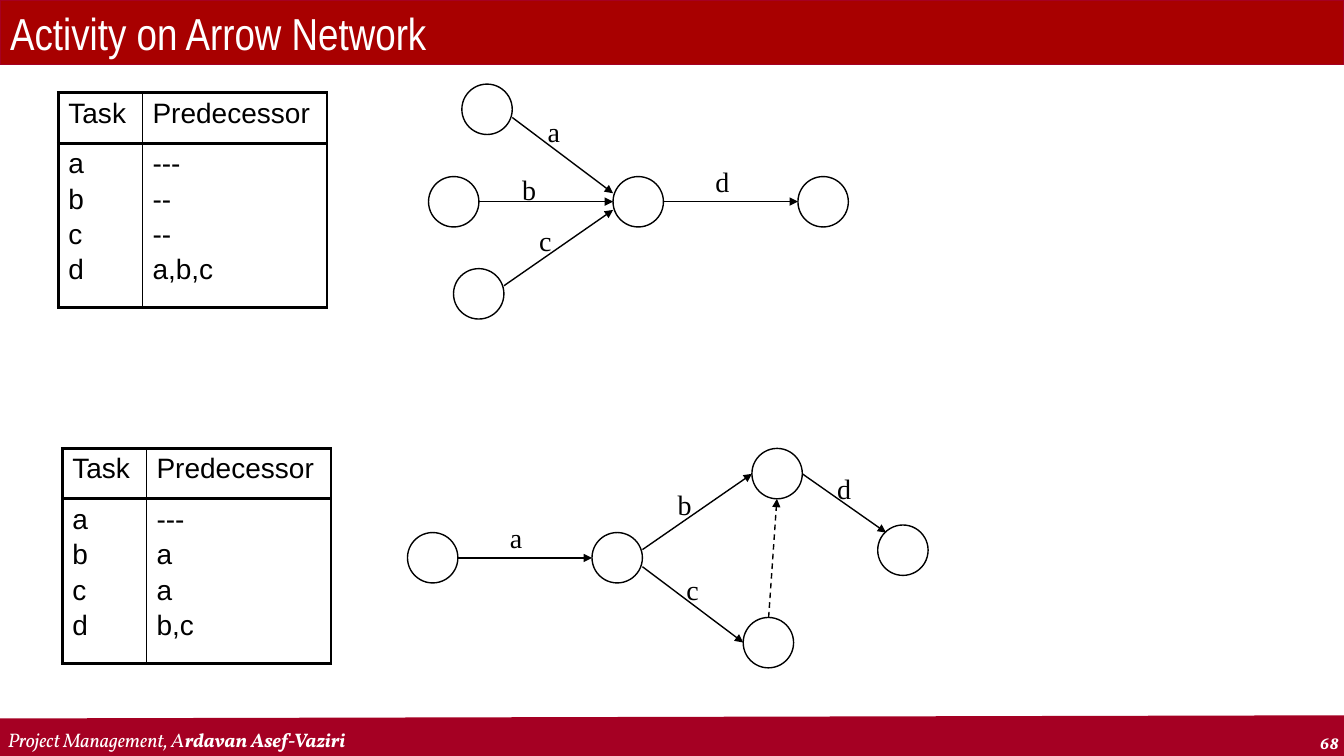
from dataclasses import dataclass

import pptx
import pptx.dml.color
import pptx.enum.dml
import pptx.enum.shapes
import pptx.enum.text
import pptx.oxml
import pptx.oxml.ns
import pptx.util
from pptx.util import Cm


@dataclass(frozen=True)
class Theme:
    banner: str = "A80000"
    footer: str = "A50023"
    ink: str = "000000"
    light: str = "FFFFFF"
    title_font: str = "Arial Narrow"
    table_font: str = "Arial"
    label_font: str = "Times New Roman"
    footer_font: str = "Vollkorn"
    title_size: float = 32
    text_size: float = 20
    footer_size: float = 14
    number_size: float = 12
    thin: float = 1
    thick: float = 2.25
    footer_bar: float = 29.25


theme = Theme()
rgb = pptx.dml.color.RGBColor.from_string
namespace = pptx.oxml.ns.nsdecls("a")


def style_text(frame, font, size, color, **flags):
    """Format every run of a text frame."""
    for para in frame.paragraphs:
        for span in para.runs:
            span.font.name = font
            span.font.size = pptx.util.Pt(size)
            span.font.color.rgb = rgb(color)
            for flag, value in flags.items():
                setattr(span.font, flag, value)


def add_line(start, end, color, width):
    """Draw a straight line without a shadow between two points in cm."""
    line = page.shapes.add_connector(
        pptx.enum.shapes.MSO_CONNECTOR.STRAIGHT,
        Cm(start[0]), Cm(start[1]), Cm(end[0]), Cm(end[1]))
    line.line.color.rgb = rgb(color)
    line.line.width = pptx.util.Pt(width)
    line._element.spPr.append(pptx.oxml.parse_xml(f"<a:effectLst {namespace}/>"))
    return line


deck = pptx.Presentation()
deck.slide_width, deck.slide_height = Cm(33.87), Cm(19.05)
page = deck.slides.add_slide(deck.slide_layouts[5])

# Title banner
title = page.shapes.title
title.left, title.top, title.width, title.height = Cm(0), Cm(0), Cm(33.87), Cm(1.63)
title.fill.solid()
title.fill.fore_color.rgb = rgb(theme.banner)
title.line.color.rgb = rgb(theme.footer)
title.line.width = pptx.util.Pt(0.75)
title.text_frame.text = "Activity on Arrow Network"
title.text_frame.auto_size = pptx.enum.text.MSO_AUTO_SIZE.NONE
title.text_frame.vertical_anchor = pptx.enum.text.MSO_ANCHOR.MIDDLE
title.text_frame.paragraphs[0].alignment = pptx.enum.text.PP_ALIGN.LEFT
style_text(title.text_frame, theme.title_font, theme.title_size, theme.light)

# Footer bar, course name and page number
add_line((-0.03, 18.62), (33.93, 18.54), theme.footer, theme.footer_bar)

course = page.shapes.add_textbox(Cm(-0.05), Cm(18.19), Cm(26.54), Cm(0.86)).text_frame
course.word_wrap = True
course.vertical_anchor = pptx.enum.text.MSO_ANCHOR.BOTTOM
for words in ("Project Management, A", "rdavan Asef-Vaziri"):
    course.paragraphs[0].add_run().text = words
style_text(course, theme.footer_font, theme.footer_size, theme.light, italic=True)
course.paragraphs[0].runs[1].font.bold = True

number = page.shapes.add_textbox(Cm(31.45), Cm(18.34), Cm(2.54), Cm(0.76)).text_frame
number.word_wrap = True
number.text = "68"
number.paragraphs[0].alignment = pptx.enum.text.PP_ALIGN.RIGHT
style_text(number, theme.footer_font, theme.number_size, theme.light, bold=True, italic=True)

# Task tables: position and the predecessors of tasks a to d
tables = [
    ((1.47, 2.34), "---\n--\n--\na,b,c"),
    ((1.57, 11.3), "---\na\na\nb,c"),
]
for (left, top), predecessors in tables:
    table = page.shapes.add_table(2, 2, Cm(left), Cm(top), Cm(6.77), Cm(5.41)).table
    table.first_row = table.horz_banding = False
    for column, width in zip(table.columns, (2.12, 4.65)):
        column.width = Cm(width)
    for row, height in zip(table.rows, (1.27, 4.14)):
        row.height = Cm(height)
    rows = [("Task", "Predecessor"), ("a\nb\nc\nd", predecessors)]
    for r, texts in enumerate(rows):
        for c, words in enumerate(texts):
            cell = table.cell(r, c)
            cell.text_frame.text = words
            cell.fill.background()
            style_text(cell.text_frame, theme.table_font, theme.text_size, theme.ink)
            for para in cell.text_frame.paragraphs[1:]:
                para.space_before = pptx.util.Pt(3)
            # Heavy frame and header rule, thin rule between the columns
            borders = {
                "lnL": theme.thin if c else theme.thick,
                "lnR": theme.thick if c else theme.thin,
                "lnT": theme.thick,
                "lnB": theme.thick,
            }
            for place, (side, width) in enumerate(borders.items()):
                cell._tc.get_or_add_tcPr().insert(place, pptx.oxml.parse_xml(
                    f'<a:{side} {namespace} w="{int(pptx.util.Pt(width))}"><a:solidFill>'
                    f'<a:srgbClr val="{theme.ink}"/></a:solidFill></a:{side}>'))

# Networks: top left of each event, then arrows (from, to, dashed), then labels
networks = [
    {
        "events": [(10.8, 4.45), (15.45, 4.45), (11.64, 2.12), (11.43, 6.77), (20.11, 4.45)],
        "arrows": [
            ((12.91, 2.96), (15.45, 4.87), False),
            ((12.07, 5.08), (15.45, 5.08), False),
            ((12.7, 7.2), (15.45, 5.29), False),
            ((16.72, 5.08), (20.11, 5.08), False),
        ],
        "labels": {"a": (13.55, 2.75), "b": (12.91, 4.23), "c": (13.34, 5.5), "d": (17.78, 4.02)},
    },
    {
        "events": [(10.27, 13.42), (14.92, 13.42), (18.95, 11.3), (18.73, 15.56), (22.12, 13.23)],
        "arrows": [
            ((11.54, 14.06), (14.92, 14.06), False),
            ((16.19, 13.85), (18.95, 11.94), False),
            ((16.19, 14.28), (18.73, 16.19), False),
            ((20.22, 11.94), (22.33, 13.42), False),
            ((19.37, 15.56), (19.58, 12.57), True),
        ],
        "labels": {"a": (12.6, 13), "b": (16.83, 12.15), "c": (17.05, 14.29), "d": (20.85, 11.75)},
    },
]
for network in networks:
    for left, top in network["events"]:
        event = page.shapes.add_shape(
            pptx.enum.shapes.MSO_SHAPE.OVAL, Cm(left), Cm(top), Cm(1.27), Cm(1.27))
        event.shadow.inherit = False
        event.fill.background()
        event.line.color.rgb = rgb(theme.ink)
        event.line.width = pptx.util.Pt(theme.thin)
    for start, end, dashed in network["arrows"]:
        arrow = add_line(start, end, theme.ink, theme.thin)
        if dashed:
            arrow.line.dash_style = pptx.enum.dml.MSO_LINE.DASH
        arrow.line._get_or_add_ln().append(
            pptx.oxml.parse_xml(f'<a:tailEnd {namespace} type="triangle"/>'))
    for task, (left, top) in network["labels"].items():
        label = page.shapes.add_textbox(Cm(left), Cm(top), Cm(0.85), Cm(1.1)).text_frame
        label.word_wrap = True
        label.text = task
        style_text(label, theme.label_font, theme.text_size, theme.ink)

deck.save("out.pptx")
